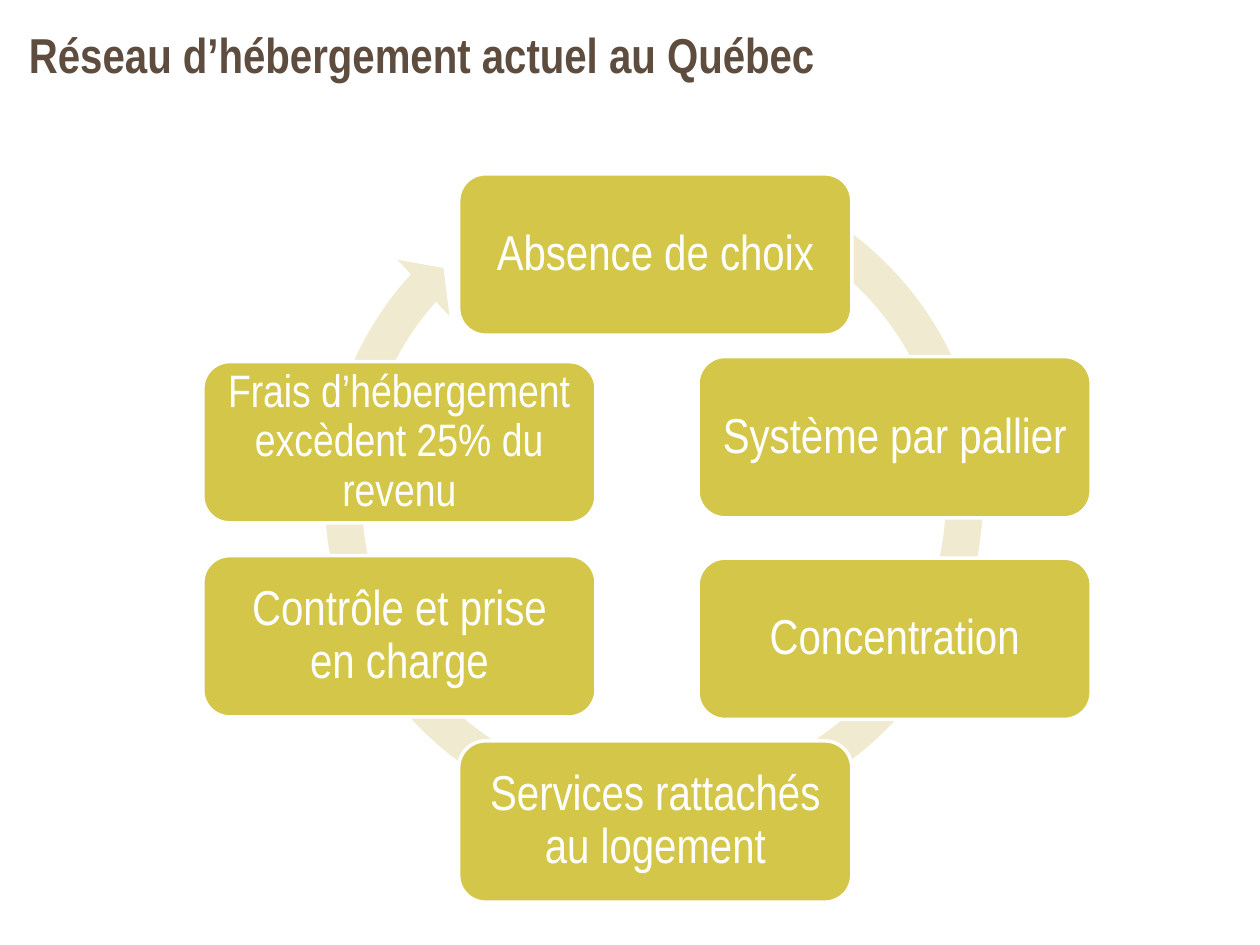
"""Build the slide showing the housing network in Québec as a cycle of six boxes."""
from pptx import Presentation
from pptx import util as u
from pptx.dml.color import RGBColor
from pptx.enum import shapes, text

COLORS = {"box": "D3C649", "ring": "EFEAD0", "white": "FFFFFF", "title": "5E4D3E"}
FONT = "Arial Narrow"
BOX_SIZE = (3.12, 1.28)
STEPS = [
    ("Absence de choix", 3.64, 1.38, 28),
    ("Système par pallier", 5.54, 2.83, 28),
    ("Concentration", 5.54, 4.43, 28),
    ("Services rattachés au logement", 3.64, 5.88, 28),
    ("Contrôle et prise en charge", 1.61, 4.41, 28),
    ("Frais d’hébergement excèdent 25% du revenu", 1.61, 2.87, 26),
]


class CycleSlide:
    def __init__(self, prs):
        self.s = prs.slides.add_slide(prs.slide_layouts[5])

    def label(self, sp, words, size, color, align, anchor, insets, bold=False):
        tf = sp.text_frame
        tf.word_wrap = True
        tf.auto_size = text.MSO_AUTO_SIZE.NONE
        tf.vertical_anchor = anchor
        tf.margin_left = tf.margin_right = u.Inches(insets[0])
        tf.margin_top = tf.margin_bottom = u.Inches(insets[1])
        p = tf.paragraphs[0]
        p.alignment = align
        p.line_spacing = 0.9
        r = p.add_run()
        r.text = words
        r.font.name = FONT
        r.font.size = u.Pt(size)
        r.font.bold = bold
        r.font.color.rgb = RGBColor.from_string(COLORS[color])

    def shape(self, kind, x, y, w, h, fill):
        sp = self.s.shapes.add_shape(kind, *map(u.Inches, (x, y, w, h)))
        sp.shadow.inherit = False
        sp.fill.solid()
        sp.fill.fore_color.rgb = RGBColor.from_string(COLORS[fill])
        sp.line.fill.background()
        return sp

    def title(self, words, x, y, w, h):
        sp = self.s.shapes.title
        sp.left, sp.top, sp.width, sp.height = map(u.Inches, (x, y, w, h))
        self.label(sp, words, 28, "title", text.PP_ALIGN.LEFT,
                   text.MSO_ANCHOR.TOP, (0, 0.08), bold=True)

    def ring(self, x, y, size, adjustments):
        sp = self.shape(shapes.MSO_SHAPE.CIRCULAR_ARROW, x, y, size, size, "ring")
        for i, value in enumerate(adjustments):
            sp.adjustments[i] = value

    def box(self, words, x, y, size):
        sp = self.shape(shapes.MSO_SHAPE.ROUNDED_RECTANGLE, x, y, *BOX_SIZE, "box")
        sp.line.color.rgb = RGBColor.from_string(COLORS["white"])
        sp.line.width = u.Pt(2)
        self.label(sp, words, size, "white", text.PP_ALIGN.CENTER,
                   text.MSO_ANCHOR.MIDDLE, (0.12, 0.12))


def main():
    prs = Presentation()
    prs.slide_width, prs.slide_height = u.Inches(10), u.Inches(7.5)
    slide = CycleSlide(prs)
    slide.title("Réseau d’hébergement actuel au Québec", 0.23, 0.17, 7.31, 1.01)
    slide.ring(2.42, 1.17, 5.54, (0.053, 3.126, 133.277, 176.767, 0.055))
    for step in STEPS:
        slide.box(*step)
    prs.save("out.pptx")


if __name__ == "__main__":
    main()
